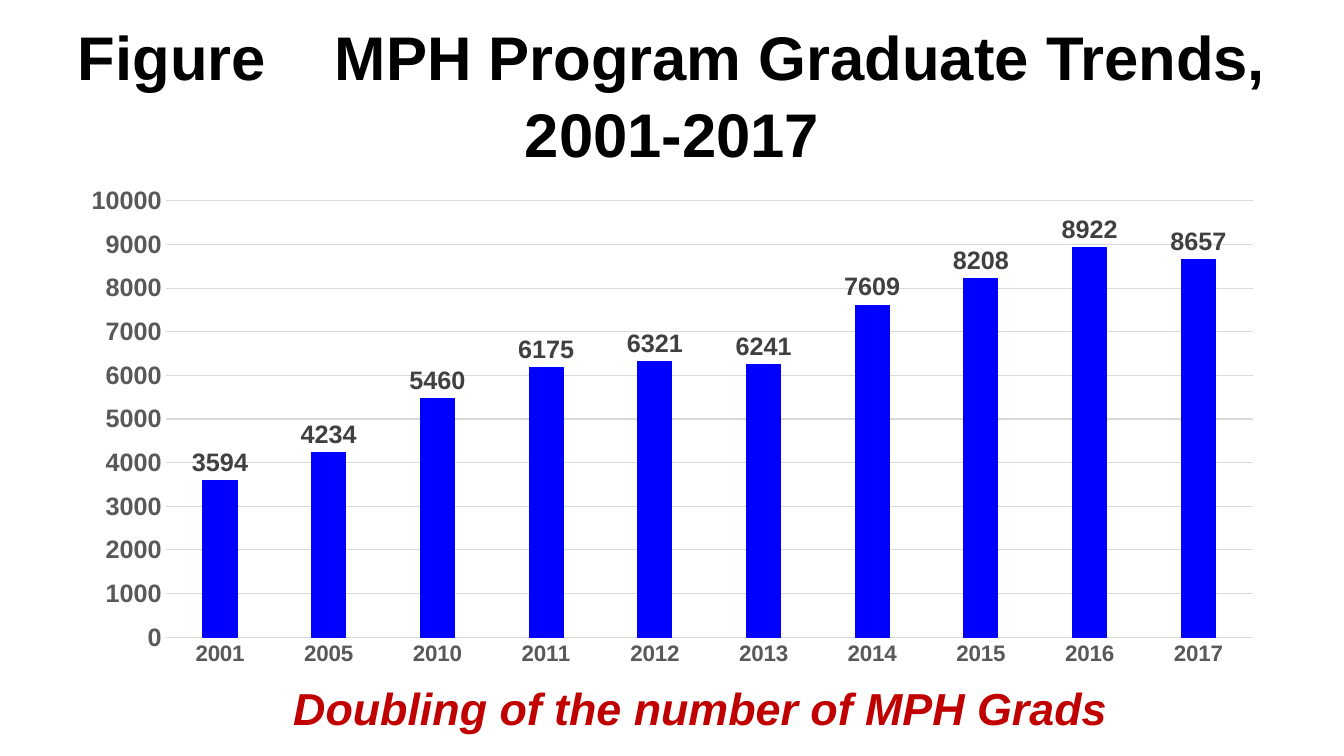
from dataclasses import dataclass

from pptx import Presentation
from pptx import util as u
from pptx.chart import data as chart_data
from pptx.dml import color
from pptx.enum import chart as charts, text


@dataclass(frozen=True)
class Theme:
    """Colours, font and type sizes of the slide."""
    font: str = "Arial"
    black: str = "000000"
    axis_text: str = "595959"
    label_text: str = "404040"
    grid: str = "D9D9D9"
    bar: str = "0000FF"
    accent: str = "C00000"
    title_size: int = 44
    note_size: int = 32
    value_size: int = 18
    category_size: int = 16


@dataclass(frozen=True)
class Box:
    """A region of the slide in centimetres."""
    left: float
    top: float
    width: float
    height: float

    def lengths(self):
        """Return the four sides as slide lengths."""
        return [u.Cm(side) for side in (self.left, self.top, self.width, self.height)]


THEME = Theme()
GRADUATES = {
    "2001": 3594, "2005": 4234, "2010": 5460, "2011": 6175, "2012": 6321,
    "2013": 6241, "2014": 7609, "2015": 8208, "2016": 8922, "2017": 8657,
}


def apply(target, values):
    """Set each named attribute of the target."""
    for name, value in values.items():
        setattr(target, name, value)


def style_font(font, size, shade, italic=False):
    """Give a font the theme face in bold with a size and colour."""
    apply(font, {"name": THEME.font, "size": u.Pt(size), "bold": True, "italic": italic})
    font.color.rgb = color.RGBColor.from_string(shade)


def style_line(line, shade):
    """Give a line a thin solid stroke."""
    line.color.rgb = color.RGBColor.from_string(shade)
    line.width = u.Pt(0.75)


def add_title(slide, box):
    """Place the title, with a wide gap after its first word."""
    title = slide.shapes.title
    apply(title, dict(zip(("left", "top", "width", "height"), box.lengths())))
    frame = title.text_frame
    apply(frame, {"word_wrap": True, "vertical_anchor": text.MSO_ANCHOR.MIDDLE,
                  "auto_size": text.MSO_AUTO_SIZE.NONE,
                  "margin_left": 0, "margin_right": 0})
    para = frame.paragraphs[0]
    apply(para, {"alignment": text.PP_ALIGN.CENTER, "line_spacing": 1.04})
    for words, spacing in (("Figure", 0), (" ", 3670),
                           ("MPH Program Graduate Trends, 2001-2017", 0)):
        span = para.add_run()
        span.text = words
        style_font(span.font, THEME.title_size, THEME.black)
        if spacing:
            span.font._element.set("spc", str(spacing))


def add_graduate_chart(slide, box):
    """Place the column chart of graduates by year."""
    table = chart_data.CategoryChartData()
    table.categories = list(GRADUATES)
    table.add_series("Series 1", list(GRADUATES.values()))
    chart = slide.shapes.add_chart(
        charts.XL_CHART_TYPE.COLUMN_CLUSTERED, *box.lengths(), table).chart
    apply(chart, {"has_legend": False, "has_title": False})
    apply(chart.font, {"name": THEME.font, "size": u.Pt(10)})

    years, counts = chart.category_axis, chart.value_axis
    for axis, size in ((years, THEME.category_size), (counts, THEME.value_size)):
        apply(axis, {"major_tick_mark": charts.XL_TICK_MARK.NONE,
                     "minor_tick_mark": charts.XL_TICK_MARK.NONE})
        style_font(axis.tick_labels.font, size, THEME.axis_text)
    apply(counts, {"minimum_scale": 0, "maximum_scale": 10000, "major_unit": 1000,
                   "has_major_gridlines": True})
    counts.format.line.fill.background()
    style_line(years.format.line, THEME.grid)
    style_line(counts.major_gridlines.format.line, THEME.grid)

    plot = chart.plots[0]
    apply(plot, {"gap_width": 219, "overlap": -27, "vary_by_categories": False})
    bars = plot.series[0]
    bars.format.fill.solid()
    bars.format.fill.fore_color.rgb = color.RGBColor.from_string(THEME.bar)
    style_line(bars.format.line, THEME.bar)
    labels = bars.data_labels
    apply(labels, {"show_value": True,
                   "position": charts.XL_LABEL_POSITION.OUTSIDE_END})
    style_font(labels.font, THEME.value_size, THEME.label_text)


def add_note(slide, box):
    """Place the takeaway line below the chart."""
    frame = slide.shapes.add_textbox(*box.lengths()).text_frame
    apply(frame, {"word_wrap": False, "auto_size": text.MSO_AUTO_SIZE.SHAPE_TO_FIT_TEXT})
    span = frame.paragraphs[0].add_run()
    span.text = "Doubling of the number of MPH Grads"
    style_font(span.font, THEME.note_size, THEME.accent, italic=True)


def main():
    """Build the slide and save the deck."""
    deck = Presentation()
    apply(deck, {"slide_width": u.Cm(33.87), "slide_height": u.Cm(19.05)})
    slide = deck.slides.add_slide(deck.slide_layouts.get_by_name("Title Only"))
    add_title(slide, Box(1.7, 0.76, 30.48, 3.18))
    add_graduate_chart(slide, Box(1.7, 4.45, 30.48, 12.57))
    add_note(slide, Box(7.14, 17.02, 21.18, 1.63))
    deck.save("out.pptx")


if __name__ == "__main__":
    main()
